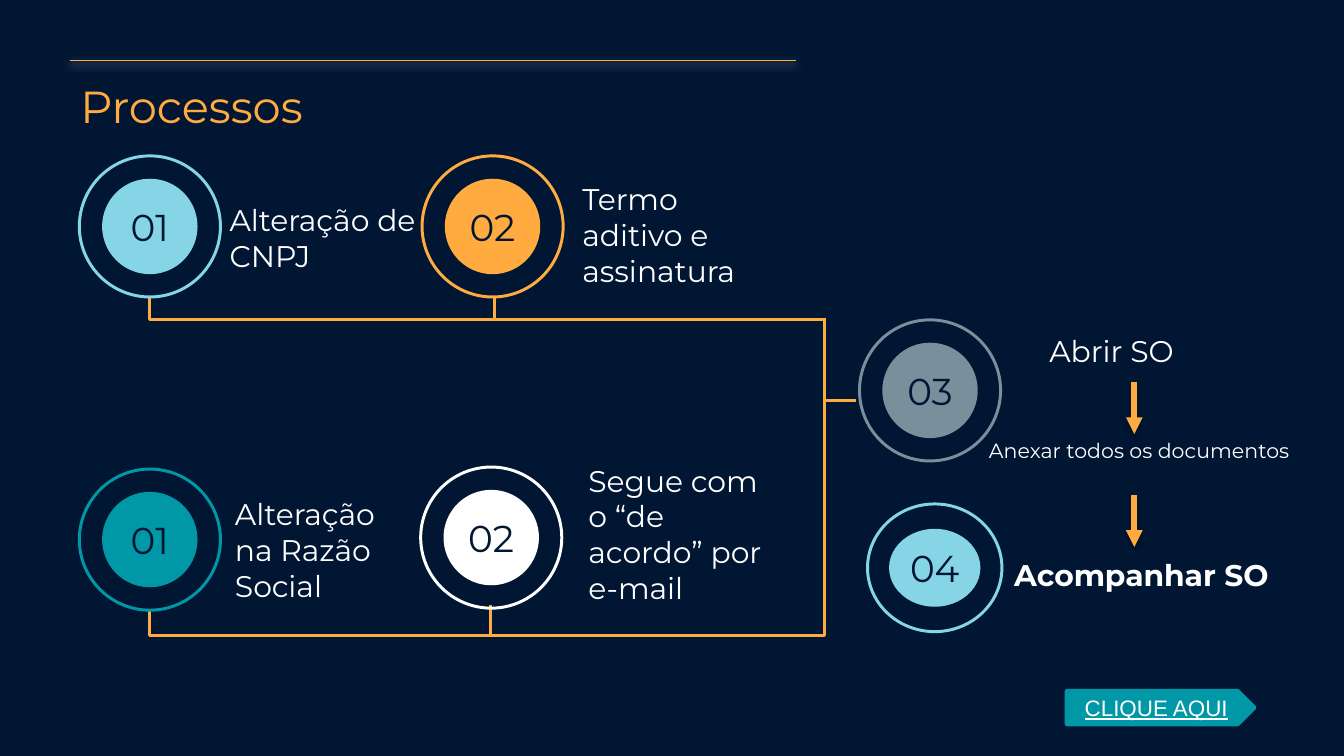
from dataclasses import dataclass
from typing import Any, Optional

from lxml import etree
from pptx import Presentation, util as u
from pptx.dml.color import RGBColor
from pptx.enum import shapes as es, text as et
from pptx.oxml import ns

WIDE = u.Inches(10)
HIGH = WIDE * 9 // 16
COL, ROW = WIDE / 100, HIGH / 56.25


@dataclass(frozen=True)
class Theme:
    navy: str = "001633"
    gold: str = "FFAB40"
    teal: str = "0097A7"
    sky: str = "85D5E6"
    slate: str = "78909C"
    white: str = "FFFFFF"
    black: str = "000000"
    face: str = "Montserrat"
    plain: str = "Arial"
    head: float = 24
    mark: float = 20
    body: float = 16
    link: float = 12
    small: float = 11
    thin: float = 0.75
    rail: float = 1.6
    edge: float = 2
    bold: float = 3


T = Theme()


@dataclass(frozen=True)
class Step:
    label: str
    x: float
    y: float
    tint: str
    disc: tuple[float, float] = (7.1, 7.1)
    ring: tuple[float, float] = (10.5, 10.5)


@dataclass(frozen=True)
class Note:
    words: str
    x: float
    y: float
    w: float
    h: float
    size: float = T.body
    tint: str = T.white
    side: Any = et.MSO_ANCHOR.BOTTOM
    align: Any = et.PP_ALIGN.LEFT
    bold: bool = False


@dataclass(frozen=True)
class Glow:
    tint: str
    share: int
    blur: float
    drop: float


@dataclass(frozen=True)
class Line:
    x1: float
    y1: float
    x2: float
    y2: float
    width: float = T.rail
    arrow: bool = False
    glow: Optional[Glow] = None


SHADE = Glow(T.black, 35, 3.1, 1.8)
LEFT, MID, TRUNK = 11.15, 36.65, 61.35
TOP, LOW = 23.8, 47.3

STEPS = [
    Step("01", LEFT, 40.15, T.teal),
    Step("02", MID - 0.1, 40, T.white),
    Step("01", LEFT, 16.85, T.sky),
    Step("02", MID, 16.85, T.gold),
    Step("03", 69.2, 29.05, T.slate),
    Step("04", 69.55, 42.25, T.sky, (6.8, 5.8), (10, 9.5)),
]
NOTES = [
    Note("Processos", 5, 4.85, 87.5, 5.2, T.head, T.gold, et.MSO_ANCHOR.TOP),
    Note("Alteração de CNPJ", 16.1, 14.25, 16, 7.1),
    Note("Termo aditivo e assinatura", 42.35, 12.55, 16, 9.9),
    Note("Abrir SO", 77.1, 24, 13.5, 4.4),
    Note("Alteração na Razão Social", 16.5, 39.9, 14.1, 6),
    Note("Anexar todos os documentos", 72.6, 31.65, 27.5, 3.7, T.small),
    Note("Segue com o “de acordo” por e-mail", 42.8, 34.85, 15.5, 11.2),
    Note("Acompanhar SO ", 73.1, 40.9, 24.3, 3.7,
         side=et.MSO_ANCHOR.MIDDLE, align=et.PP_ALIGN.CENTER, bold=True),
]
BENDS = [
    [(TRUNK, TOP), (LEFT, TOP), (LEFT, 22.1)],
    [(LEFT, 45.4), (LEFT, LOW), (TRUNK, LOW), (TRUNK, 45.4)],
]
LINES = [
    Line(5.2, 4.5, 59.2, 4.5, T.thin, glow=Glow(T.white, 50, 4.5, 1.5)),
    Line(36.8, TOP, 36.8, 22.1),
    Line(36.5, LOW, 36.5, 45),
    Line(TRUNK, 46.1, TRUNK, 23.7),
    Line(TRUNK, 29.8, 63.7, 29.8),
    Line(84.4, 28.4, 84.4, 32.3, T.bold, True, SHADE),
    Line(84.4, 36.85, 84.4, 40.7, T.bold, True, SHADE),
]


def across(n: float) -> int:
    return round(n * COL)


def down(n: float) -> int:
    return round(n * ROW)


def assign(thing: Any, form: dict[str, Any]) -> None:
    for key, val in form.items():
        setattr(thing, key, val)


def tone(tint: str) -> RGBColor:
    return RGBColor.from_string(tint)


def stroke(line: Any, tint: str, width: float) -> None:
    line.color.rgb = tone(tint)
    line.width = u.Pt(width)


def paint(shape: Any, tint: Optional[str]) -> None:
    shape.shadow.inherit = False
    if tint:
        shape.fill.solid()
        shape.fill.fore_color.rgb = tone(tint)
    else:
        shape.fill.background()


def write(shape: Any, words: str, frame: dict[str, Any],
          font: dict[str, Any], tint: str, align: Any) -> None:
    assign(shape.text_frame, frame)
    para = shape.text_frame.paragraphs[0]
    para.alignment = align
    run = para.add_run()
    run.text = words
    assign(run.font, font)
    run.font.color.rgb = tone(tint)


def inset(side: float, edge: float) -> dict[str, int]:
    return {"margin_left": u.Inches(side), "margin_right": u.Inches(side),
            "margin_top": u.Inches(edge), "margin_bottom": u.Inches(edge)}


def oval(slide: Any, step: Step, size: tuple[float, float]) -> Any:
    w, h = size
    return slide.shapes.add_shape(
        es.MSO_SHAPE.OVAL, across(step.x - w / 2), down(step.y - h / 2),
        across(w), down(h))


def badge(slide: Any, step: Step) -> None:
    disc = oval(slide, step, step.disc)
    paint(disc, step.tint)
    disc.line.fill.background()
    write(disc, step.label,
          {"word_wrap": False, "vertical_anchor": et.MSO_ANCHOR.MIDDLE, **inset(0, 0)},
          {"name": T.face, "size": u.Pt(T.mark)}, T.navy, et.PP_ALIGN.CENTER)
    ring = oval(slide, step, step.ring)
    paint(ring, None)
    stroke(ring.line, step.tint, T.rail)


def caption(slide: Any, note: Note) -> None:
    box = slide.shapes.add_textbox(
        across(note.x), down(note.y), across(note.w), down(note.h))
    write(box, note.words,
          {"word_wrap": True, "vertical_anchor": note.side, **inset(0.1, 0.1)},
          {"name": T.face, "size": u.Pt(note.size), "bold": note.bold},
          note.tint, note.align)


def bend(slide: Any, spots: list[tuple[float, float]]) -> None:
    dots = [(across(x), down(y)) for x, y in spots]
    pen = slide.shapes.build_freeform(*dots[0])
    pen.add_line_segments(dots[1:], close=False)
    shape = pen.convert_to_shape()
    paint(shape, None)
    stroke(shape.line, T.gold, T.rail)


def child(top: Any, tag: str, **form: Any) -> Any:
    return etree.SubElement(top, ns.qn(tag), {k: str(v) for k, v in form.items()})


def link(slide: Any, line: Line) -> None:
    wire = slide.shapes.add_connector(
        es.MSO_CONNECTOR.STRAIGHT, across(line.x1), down(line.y1),
        across(line.x2), down(line.y2))
    stroke(wire.line, T.gold, line.width)
    props = wire._element.spPr
    if line.arrow:
        child(props.find(ns.qn("a:ln")), "a:tailEnd", type="triangle")
    fx = child(props, "a:effectLst")
    if line.glow:
        cast = child(fx, "a:outerShdw", blurRad=u.Pt(line.glow.blur),
                     dist=u.Pt(line.glow.drop), dir=90 * 60000,
                     algn="bl", rotWithShape=0)
        hue = child(cast, "a:srgbClr", val=line.glow.tint)
        child(hue, "a:alpha", val=line.glow.share * 1000)


def button(slide: Any) -> None:
    tag = slide.shapes.add_shape(
        es.MSO_SHAPE.PENTAGON, across(79.35), down(51.4), across(14), down(2.5))
    paint(tag, T.teal)
    stroke(tag.line, T.teal, T.edge)
    write(tag, "CLIQUE AQUI",
          {"word_wrap": True, "vertical_anchor": et.MSO_ANCHOR.MIDDLE, **inset(0.1, 0.05)},
          {"name": T.plain, "size": u.Pt(T.link), "underline": True},
          T.white, et.PP_ALIGN.CENTER)


def main() -> None:
    deck = Presentation()
    assign(deck, {"slide_width": WIDE, "slide_height": HIGH})
    slide = deck.slides.add_slide(deck.slide_layouts[6])
    back = slide.background.fill
    back.solid()
    back.fore_color.rgb = tone(T.navy)
    for draw, items in ((bend, BENDS), (link, LINES), (badge, STEPS), (caption, NOTES)):
        for item in items:
            draw(slide, item)
    button(slide)
    deck.save("out.pptx")


if __name__ == "__main__":
    main()
